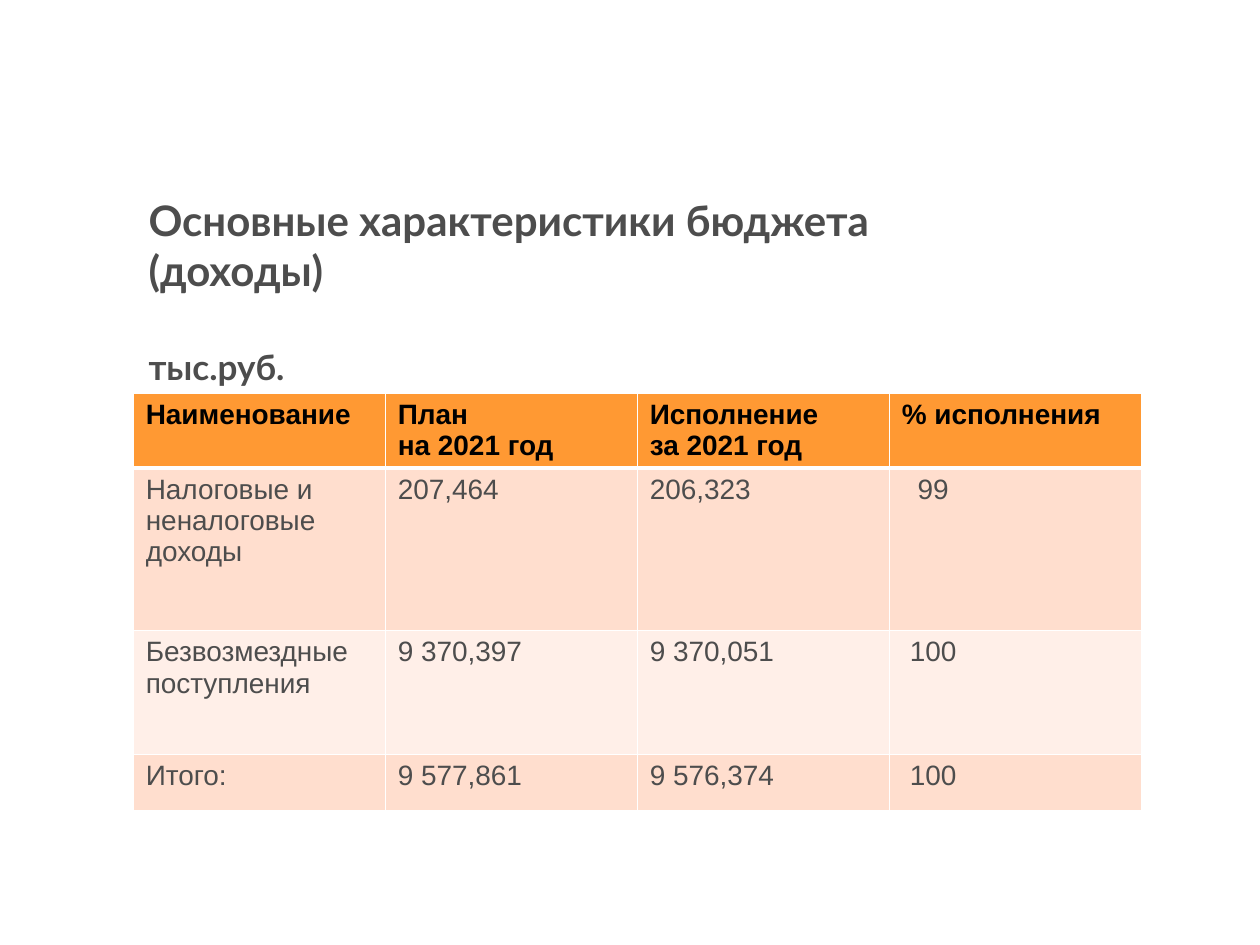
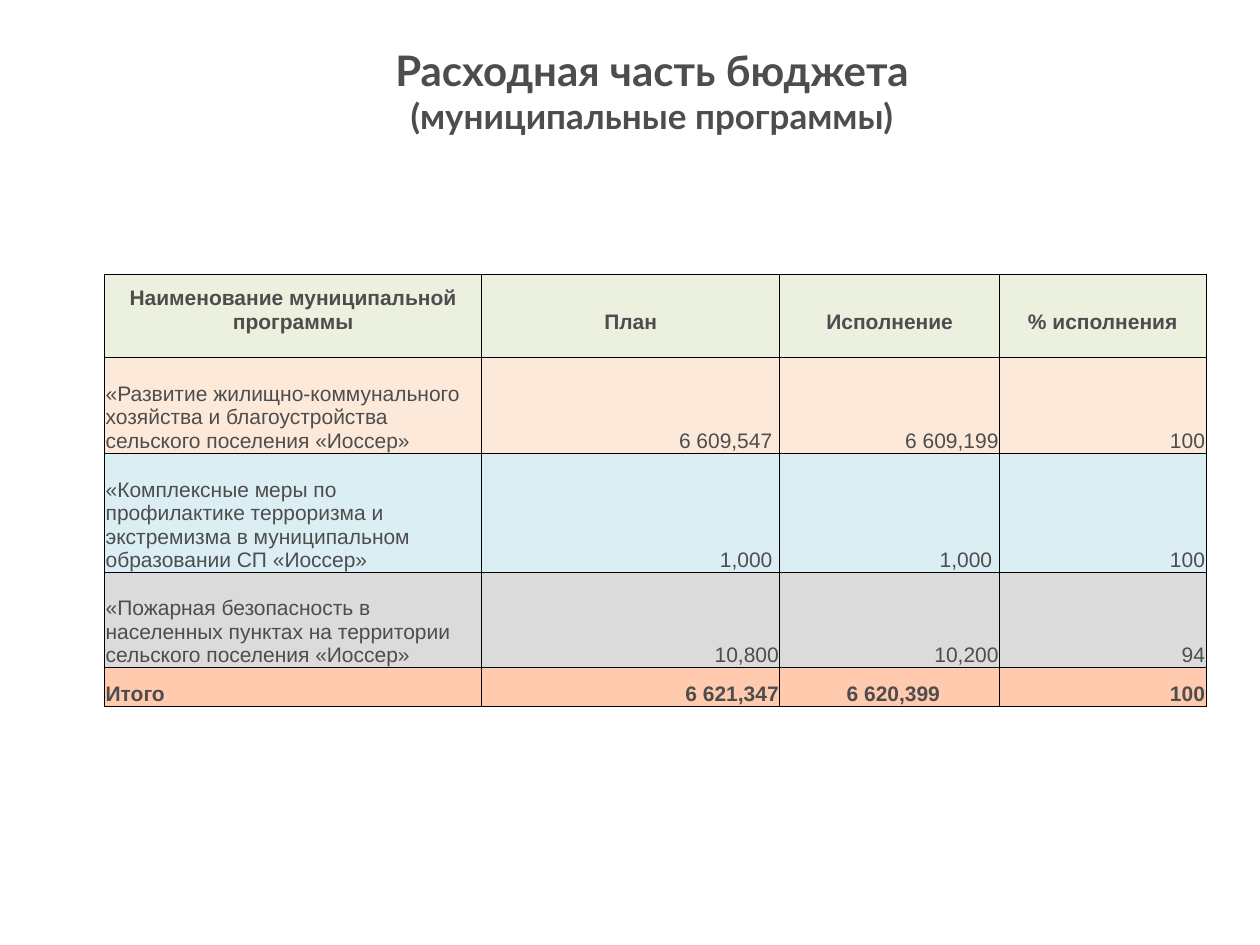
"""Build two budget slides, each with a title and a table."""
from lxml import etree
from pptx import Presentation
from pptx.dml.color import RGBColor
from pptx.enum.text import MSO_ANCHOR, MSO_AUTO_SIZE, PP_ALIGN
from pptx.oxml.ns import qn
from pptx.util import Cm, Pt

LEFT, MID, RIGHT = PP_ALIGN.LEFT, PP_ALIGN.CENTER, PP_ALIGN.RIGHT
TOP, CENTER, BOTTOM = MSO_ANCHOR.TOP, MSO_ANCHOR.MIDDLE, MSO_ANCHOR.BOTTOM
FIXED = MSO_AUTO_SIZE.NONE

GREY = RGBColor(0x4D, 0x4D, 0x4D)
BLACK = RGBColor(0, 0, 0)
WHITE = RGBColor(255, 255, 255)
ORANGE = RGBColor(0xFF, 0x99, 0x33)
PEACH = RGBColor(0xFF, 0xDE, 0xCE)
BLUSH = RGBColor(0xFF, 0xEF, 0xE8)
GREEN = RGBColor(0xEB, 0xF1, 0xDE)
CREAM = RGBColor(0xFD, 0xE9, 0xD9)
BLUE = RGBColor(0xDA, 0xEE, 0xF3)
SILVER = RGBColor(0xDB, 0xDB, 0xDB)
CORAL = RGBColor(0xFF, 0xCA, 0xAD)

INCOME = {
    "title": [("Основные характеристики бюджета", 24, 0),
              ("(доходы)", 24, 0), ("тыс.руб.", 20, 28.8)],
    "box": (2.74, 4.88, 20.32, 1.98),
    "title_align": LEFT,
    "spot": (2.69, 7.92),
    "cols": [5.08] * 4,
    "rows": [1.5, 3.27, 2.5, 1.13],
    "fills": [ORANGE, PEACH, BLUSH, PEACH],
    "cells": [
        ["Наименование", "План\nна 2021 год", "Исполнение\nза 2021 год",
         "% исполнения"],
        ["Налоговые и неналоговые доходы", "207,464", "206,323", "99"],
        ["Безвозмездные поступления", "9 370,397", "9 370,051", "100"],
        ["Итого:", "9 577,861", "9 576,374", "100"],
    ],
    "size": 16, "head": BLACK, "bold": {0}, "anchor": TOP,
    "head_align": LEFT, "num_align": LEFT,
    "insets": (0.25, 0.13, 0.25, 0.13), "foot": 0.13,
    "pads": {(1, 3): 0.57, (2, 3): 0.41, (3, 3): 0.41},
    "line": WHITE, "thin": 1, "thick": 3,
}
COSTS = {
    "title": [("Расходная часть бюджета", 24, 0),
              ("(муниципальные программы)", 20, 0)],
    "box": (3.3, 1.12, 19.69, 1.4),
    "title_align": MID,
    "spot": (2.11, 5.53),
    "cols": [7.6, 6.01, 4.43, 4.16],
    "rows": [1.68, 1.92, 2.4, 1.92, 0.79],
    "fills": [GREEN, CREAM, BLUE, SILVER, CORAL],
    "cells": [
        ["Наименование муниципальной программы", "План", "Исполнение",
         "% исполнения"],
        ["«Развитие жилищно-коммунального хозяйства и благоустройства "
         "сельского поселения «Иоссер»", "6 609,547", "6 609,199", "100"],
        ["«Комплексные меры по профилактике терроризма и экстремизма "
         "в муниципальном образовании СП «Иоссер»", "1,000", "1,000", "100"],
        ["«Пожарная безопасность в населенных пунктах на территории "
         "сельского поселения «Иоссер»", "10,800", "10,200", "94"],
        ["Итого", "6 621,347", "6 620,399", "100"],
    ],
    "size": 12, "head": GREY, "bold": {0, 4}, "anchor": BOTTOM,
    "head_align": MID, "num_align": RIGHT,
    "insets": (0.02, 0.02, 0.02, 0), "foot": 0.48,
    "pads": {(1, 1): 0.15, (2, 1): 0.15, (2, 2): 0.15, (4, 2): 1.2},
    "line": BLACK, "thin": 0.5, "thick": 0.5,
}


def style(para, face, size, color, bold, align):
    """Set the look of one paragraph."""
    font = para.font
    font.name, font.size, font.bold = face, Pt(size), bold
    font.color.rgb = color
    para.alignment = align


def add_title(slide, data):
    """Place the title and fill its lines."""
    title = slide.shapes.title
    title.left, title.top, title.width, title.height = map(Cm, data["box"])
    frame = title.text_frame
    frame.auto_size, frame.word_wrap = FIXED, True
    frame.vertical_anchor = CENTER
    frame.text = "\n".join(text for text, _, _ in data["title"])
    for para, (_, size, gap) in zip(frame.paragraphs, data["title"]):
        style(para, "Lato", size, GREY, True, data["title_align"])
        if gap:
            para.space_before = Pt(gap)


def add_edges(cell, color, widths):
    """Draw the four borders of a cell."""
    props = cell._tc.get_or_add_tcPr()
    for side, width in zip("LRTB", widths):
        edge = etree.SubElement(props, qn(f"a:ln{side}"), w=str(Pt(width)))
        fill = etree.SubElement(edge, qn("a:solidFill"))
        etree.SubElement(fill, qn("a:srgbClr"), val=str(color))


def fill_cell(cell, text, row, col, data):
    """Write and format one table cell."""
    thin, thick = data["thin"], data["thick"]
    add_edges(cell, data["line"], (thin, thin, thick if row == 1 else thin,
                                   thick if row == 0 else thin))
    cell.fill.solid()
    cell.fill.fore_color.rgb = data["fills"][row]
    left, top, right, foot = data["insets"]
    if row == 0:
        foot, align = data["foot"], data["head_align"]
    else:
        align = data["num_align"] if col else LEFT
    pad = data["pads"].get((row, col))
    if pad and align == RIGHT:
        right = pad
    elif pad:
        left = pad
    cell.margin_left, cell.margin_top = Cm(left), Cm(top)
    cell.margin_right, cell.margin_bottom = Cm(right), Cm(foot)
    cell.vertical_anchor = data["anchor"]
    cell.text = text
    color = GREY if row else data["head"]
    for para in cell.text_frame.paragraphs:
        style(para, "Arial", data["size"], color, row in data["bold"], align)


def add_grid(slide, data):
    """Add the table with its sizes and cells."""
    cols, rows = data["cols"], data["rows"]
    table = slide.shapes.add_table(
        len(rows), len(cols), *map(Cm, data["spot"]),
        Cm(sum(cols)), Cm(sum(rows))).table
    for col, width in zip(table.columns, cols):
        col.width = Cm(width)
    for row, height in zip(table.rows, rows):
        row.height = Cm(height)
    for i, line in enumerate(data["cells"]):
        for j, text in enumerate(line):
            fill_cell(table.cell(i, j), text, i, j, data)


def main():
    """Build and save the deck."""
    deck = Presentation()
    deck.slide_width, deck.slide_height = Cm(25.4), Cm(19.05)
    for data in (INCOME, COSTS):
        slide = deck.slides.add_slide(deck.slide_layouts[5])
        add_title(slide, data)
        add_grid(slide, data)
    deck.save("out.pptx")


if __name__ == "__main__":
    main()
